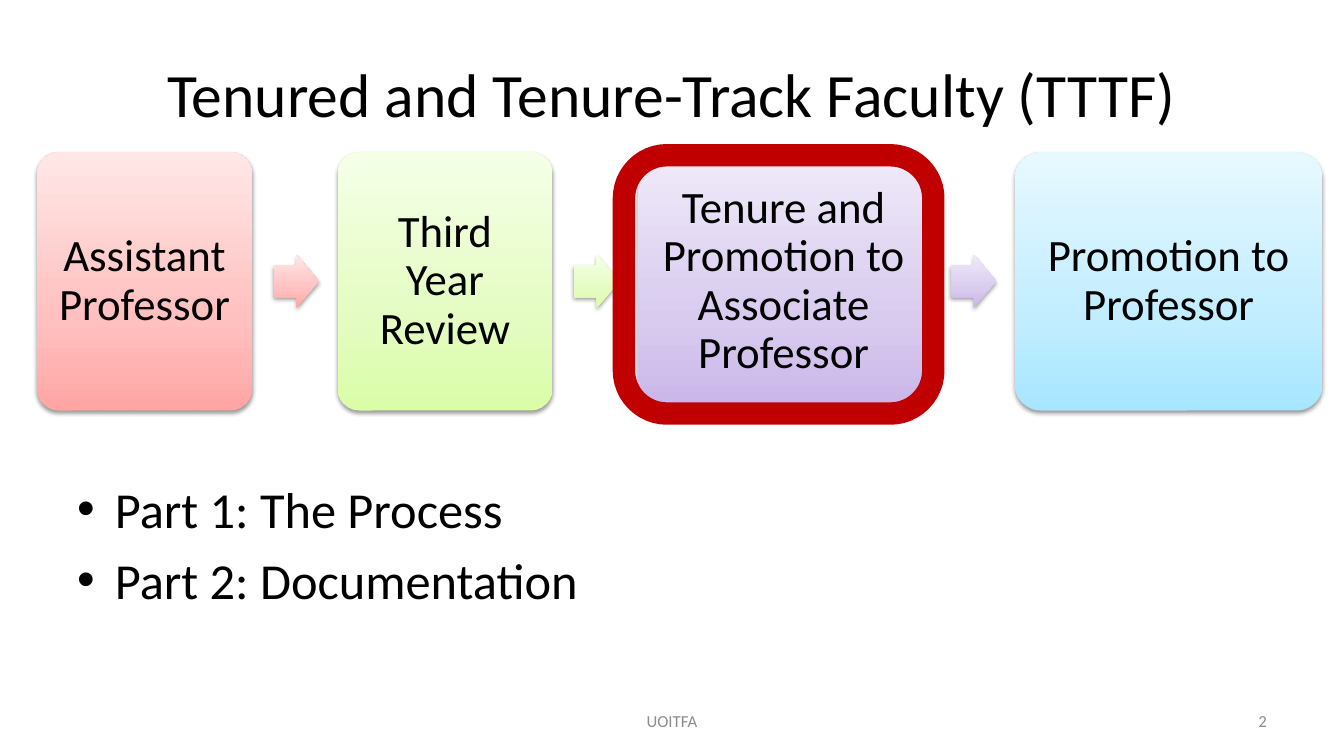
from lxml import etree
from pptx import Presentation
from pptx.dml.color import RGBColor
from pptx.enum.shapes import MSO_SHAPE
from pptx.enum.text import MSO_ANCHOR, PP_ALIGN
from pptx.oxml.ns import qn
from pptx.util import Pt

ROUND, ARROW = MSO_SHAPE.ROUNDED_RECTANGLE, MSO_SHAPE.RIGHT_ARROW
TOP, MIDDLE = MSO_ANCHOR.TOP, MSO_ANCHOR.MIDDLE
LEFT, CENTER, RIGHT = PP_ALIGN.LEFT, PP_ALIGN.CENTER, PP_ALIGN.RIGHT

BLACK = RGBColor(0x00, 0x00, 0x00)
GREY = RGBColor(0x8C, 0x8C, 0x8C)
DARK_RED = RGBColor(0xC0, 0x00, 0x00)
# Gradient colours from bottom to top
RED = [RGBColor(0xFF, 0xA6, 0xA5), RGBColor(0xFF, 0xC0, 0xBF), RGBColor(0xFF, 0xE7, 0xE7)]
GREEN = [RGBColor(0xDA, 0xFD, 0xA7), RGBColor(0xE4, 0xFC, 0xC2), RGBColor(0xF5, 0xFF, 0xE7)]
PURPLE = [RGBColor(0xC9, 0xB5, 0xE8), RGBColor(0xD8, 0xCB, 0xEE), RGBColor(0xF0, 0xEA, 0xF9)]
BLUE = [RGBColor(0xA7, 0xE6, 0xFF), RGBColor(0xC1, 0xED, 0xFF), RGBColor(0xE7, 0xF8, 0xFF)]
STOPS = [0, 35, 100]

# Label, width, colours
STAGES = [
    ("Assistant Professor", 153.4, RED),
    ("Third Year Review", 153.4, GREEN),
    ("Tenure and Promotion to\vAssociate Professor", 208, PURPLE),
    ("Promotion to\vProfessor", 219.6, BLUE),
]
STAGE_GAP = 61.2
STAGE_MARGIN = 9  # the rounded corners inset the text further
ARROW_GAP, ARROW_W, ARROW_H = 15.4, 32.4, 38.2


def write(tf, lines, size, color=BLACK, align=LEFT, anchor=MIDDLE):
    tf.word_wrap = True
    tf.vertical_anchor = anchor
    for i, line in enumerate(lines):
        p = tf.paragraphs[0] if i == 0 else tf.add_paragraph()
        p.text = line
        p.alignment = align
        for r in p.runs:
            for name, value in {"name": "Calibri", "size": Pt(size)}.items():
                setattr(r.font, name, value)
            r.font.color.rgb = color


def add_text(slide, box, lines, size, **style):
    tf = slide.shapes.add_textbox(*map(Pt, box)).text_frame
    write(tf, lines, size, **style)
    return tf


def add_tinted(slide, kind, box, colors, adjustments):
    """Add a shape with an upward gradient and a soft shadow below."""
    sp = slide.shapes.add_shape(kind, *map(Pt, box))
    for i, value in enumerate(adjustments):
        sp.adjustments[i] = value
    sp.line.fill.background()
    sp.fill.gradient()
    sp.fill.gradient_angle = 90
    sp.shadow.inherit = False
    spPr = sp._element.spPr
    stops = spPr.find(".//" + qn("a:gsLst"))
    for stop in list(stops):
        stops.remove(stop)
    for pos, color in zip(STOPS, colors):
        stop = etree.SubElement(stops, qn("a:gs"), pos=str(pos * 1000))
        etree.SubElement(stop, qn("a:srgbClr"), val=str(color))
    shadow = etree.SubElement(
        spPr.find(qn("a:effectLst")), qn("a:outerShdw"), blurRad=str(Pt(3.1)),
        dist=str(Pt(1.6)), dir="5400000", rotWithShape="0")
    black = etree.SubElement(shadow, qn("a:srgbClr"), val=str(BLACK))
    etree.SubElement(black, qn("a:alpha"), val="38000")
    return sp


def add_process(slide, left, top, height):
    x = left
    for i, (label, width, colors) in enumerate(STAGES):
        sp = add_tinted(slide, ROUND, (x, top, width, height), colors, [0.1])
        tf = sp.text_frame
        for side in ("left", "right", "top", "bottom"):
            setattr(tf, "margin_" + side, Pt(STAGE_MARGIN))
        write(tf, [label], 32, align=CENTER)
        tf.paragraphs[0].line_spacing = 0.9
        x += width
        if i < len(STAGES) - 1:
            arrow = (x + ARROW_GAP, top + (height - ARROW_H) / 2, ARROW_W, ARROW_H)
            add_tinted(slide, ARROW, arrow, colors, [0.6, 0.5])
        x += STAGE_GAP


def add_bullets(slide, box, lines):
    tf = add_text(slide, box, lines, 36, anchor=TOP)
    for i, p in enumerate(tf.paragraphs):
        pPr = p._p.get_or_add_pPr()
        pPr.set("marL", str(Pt(27)))
        pPr.set("indent", str(Pt(-27)))
        etree.SubElement(pPr, qn("a:buFont"), typeface="Arial")
        etree.SubElement(pPr, qn("a:buChar"), char="•")
        if i:
            p.space_before = Pt(7.2)


def add_highlight(slide, box):
    sp = slide.shapes.add_shape(ROUND, *map(Pt, box))
    sp.shadow.inherit = False
    sp.fill.background()
    sp.line.color.rgb = DARK_RED
    sp.line.width = Pt(16)


def add_footer(slide, top, height):
    add_text(slide, (328, top, 304, height), ["UOITFA"], 12, color=GREY, align=CENTER)
    add_text(slide, (688, top, 224, height), ["2"], 12, color=GREY, align=RIGHT)


def main():
    prs = Presentation()
    prs.slide_width, prs.slide_height = Pt(960), Pt(540)
    slide = prs.slides.add_slide(prs.slide_layouts[6])
    add_process(slide, 26.6, 108.7, 184.5)
    add_text(slide, (48, 21.6, 864, 90), ["Tenured and Tenure-Track Faculty (TTTF)"],
             44, align=CENTER)
    add_bullets(slide, (48, 338, 864, 144),
                ["Part 1: The Process", "Part 2: Documentation"])
    add_footer(slide, 500.5, 28.8)
    add_highlight(slide, (445.7, 110.9, 221, 184.5))
    prs.save("out.pptx")


if __name__ == "__main__":
    main()
